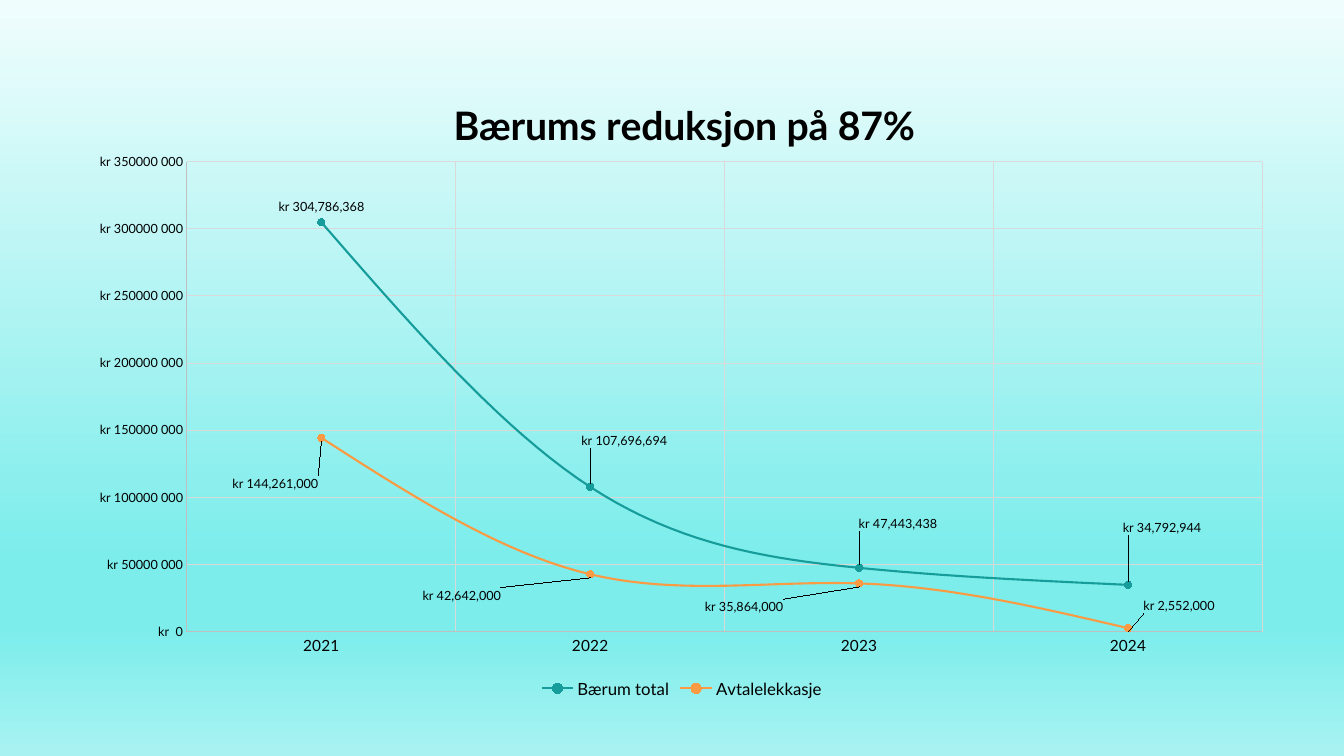
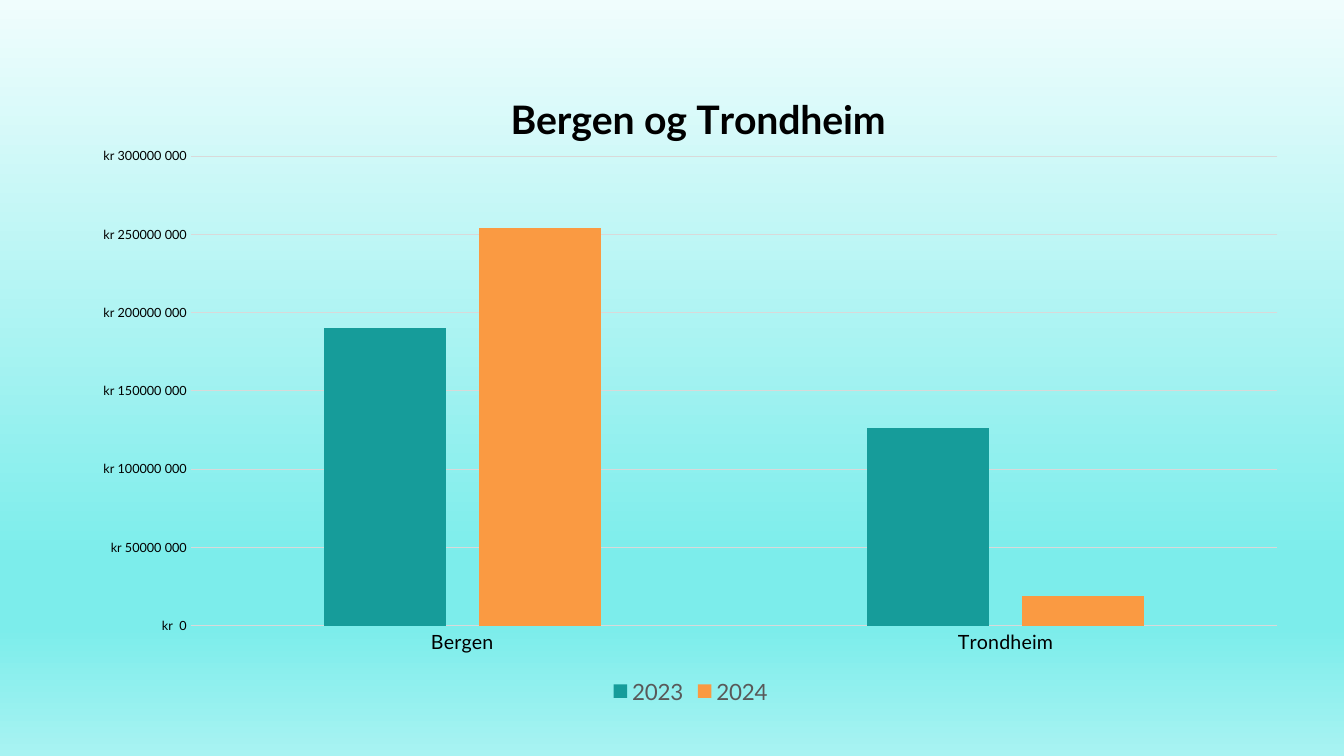
"""Build two chart slides on municipal spending."""
from copy import deepcopy
from dataclasses import dataclass

from pptx import Presentation
from pptx.chart.data import CategoryChartData
from pptx.dml.color import RGBColor
from pptx.enum.chart import (
    XL_CHART_TYPE, XL_LABEL_POSITION, XL_LEGEND_POSITION, XL_MARKER_STYLE, XL_TICK_MARK)
from pptx.oxml import parse_xml
from pptx.oxml.ns import nsdecls
from pptx.util import Cm, Pt

LINE, COLUMN = XL_CHART_TYPE.LINE_MARKERS, XL_CHART_TYPE.COLUMN_CLUSTERED
ABOVE, BELOW = XL_LABEL_POSITION.ABOVE, XL_LABEL_POSITION.BELOW
LEGEND_BOTTOM = XL_LEGEND_POSITION.BOTTOM
CIRCLE = XL_MARKER_STYLE.CIRCLE
NO_TICK = XL_TICK_MARK.NONE


@dataclass(frozen=True)
class Theme:
    """Hold the shared colours, type sizes and number formats."""
    font: str = "Lato"
    text: str = "000000"
    muted: str = "595959"
    axis: str = "BFBFBF"
    grid: str = "D9D9D9"
    series: tuple = ("169C9A", "FA9A42")
    background: tuple = ((0, "F0FDFD"), (0.74, "7CEDEB"), (0.83, "7CEDEB"), (1, "A8F3F2"))
    title_size: int = 28
    base_size: int = 10
    small_size: int = 9
    axis_format: str = '"kr"\\ #\\ ##0;[Red]\\-"kr"\\ #\\ ##0'
    label_format: str = '"kr"\\ #,##0'


THEME = Theme()


def set_values(target, values):
    """Set each attribute named in a dict of format values."""
    for name, value in values.items():
        setattr(target, name, value)


def style_font(font, size, color=THEME.text, bold=False):
    """Apply the theme typeface with a size and colour."""
    set_values(font, {"name": THEME.font, "size": Pt(size), "bold": bold})
    font.color.rgb = RGBColor.from_string(color)


def style_line(line, color, width=0.75):
    """Give a line a solid colour and a width."""
    line.color.rgb = RGBColor.from_string(color)
    line.width = Pt(width)


def style_fill(fill, color):
    """Give a fill one solid colour."""
    fill.solid()
    fill.fore_color.rgb = RGBColor.from_string(color)


def place(parent, index, **percents):
    """Insert a manual chart layout given in percent."""
    for old in parent.xpath("c:layout"):
        parent.remove(old)
    inner = '<c:layoutTarget val="inner"/>' if "w" in percents else ""
    modes = "" if percents.pop("offset", False) else (
        '<c:xMode val="edge"/><c:yMode val="edge"/>')
    sizes = "".join(f'<c:{key} val="{value / 100:.3f}"/>' for key, value in percents.items())
    parent.insert(index, parse_xml(
        f'<c:layout {nsdecls("c")}><c:manualLayout>{inner}{modes}{sizes}'
        "</c:manualLayout></c:layout>"))


def clear_fills(chart):
    """Make the chart area and the plot area transparent."""
    no_fill = parse_xml(
        f'<c:spPr {nsdecls("c", "a")}><a:noFill/><a:ln><a:noFill/></a:ln></c:spPr>')
    chart.element.xpath("c:chart")[0].addnext(no_fill)
    chart.element.xpath("c:chart/c:plotArea")[0].append(deepcopy(no_fill))


def add_page(deck):
    """Add a blank page with the gradient background."""
    page = deck.slides.add_slide(deck.slide_layouts[6])
    fill = page.background.fill
    fill.gradient()
    fill.gradient_angle = 270
    stop_list = page.element.xpath(".//a:gsLst")[0]
    while len(stop_list) < len(THEME.background):
        stop_list.append(deepcopy(stop_list[0]))
    for stop, (position, color) in zip(fill.gradient_stops, THEME.background):
        stop.position = position
        stop.color.rgb = RGBColor.from_string(color)
    return page


def style_title(chart, text, x, y):
    """Write the bold chart title at a position in percent."""
    chart.has_title = True
    frame = chart.chart_title.text_frame
    frame.text = text
    style_font(frame.paragraphs[0].runs[0].font, THEME.title_size, bold=True)
    place(chart.element.xpath("c:chart/c:title")[0], 1, x=x, y=y)


def style_axes(chart, category_size, maximum):
    """Format the category axis and the kroner axis."""
    for axis, size in ((chart.category_axis, category_size),
                       (chart.value_axis, THEME.small_size)):
        set_values(axis, {"major_tick_mark": NO_TICK, "minor_tick_mark": NO_TICK})
        style_font(axis.tick_labels.font, size)
    set_values(chart.value_axis, {
        "minimum_scale": 0, "maximum_scale": maximum, "major_unit": 50_000_000,
        "has_major_gridlines": True})
    style_line(chart.value_axis.major_gridlines.format.line, THEME.grid)
    set_values(chart.value_axis.tick_labels, {
        "number_format": THEME.axis_format, "number_format_is_linked": False})


def style_legend(chart, size, color):
    """Put the legend under the plot."""
    chart.has_legend = True
    set_values(chart.legend, {"position": LEGEND_BOTTOM, "include_in_layout": False})
    style_font(chart.legend.font, size, color)


def add_kroner_chart(page, kind, box, categories, rows):
    """Add a chart of kroner amounts with the base font."""
    data = CategoryChartData(number_format=THEME.label_format)
    data.categories = categories
    for name, values in rows:
        data.add_series(name, values)
    chart = page.shapes.add_chart(kind, *map(Cm, box), data).chart
    style_font(chart.font, THEME.base_size)
    chart.plots[0].vary_by_categories = False
    clear_fills(chart)
    return chart


def label_series(chart, index, position, offsets):
    """Show a series' values, moving points by offsets in percent."""
    series = chart.plots[0].series[index]
    labels = series.data_labels
    set_values(labels, {
        "show_value": True, "position": position,
        "number_format": THEME.label_format, "number_format_is_linked": False})
    style_font(labels.font, THEME.small_size)
    number_format = chart.element.xpath(".//c:ser/c:dLbls/c:numFmt")[index]
    for point, (x, y) in offsets.items():
        label = series.points[point].data_label
        label.position = position
        style_font(label.font, THEME.small_size)
        element = chart.element.xpath(
            f".//c:ser[{index + 1}]/c:dLbls/c:dLbl[c:idx/@val={point}]")[0]
        place(element, 1, offset=True, x=x, y=y)
        element.insert(2, deepcopy(number_format))


def build_reduction_page(deck):
    """Build the line chart of the reduction in Bærum."""
    chart = add_kroner_chart(
        add_page(deck), LINE, (1.9, 1.65, 30.56, 16.05), ("2021", "2022", "2023", "2024"),
        (("Bærum total", (304786368, 107696694, 47443438, 34792944)),
         ("Avtalelekkasje", (144261000, 42642000, 35864000, 2552000))))
    style_title(chart, "Bærums reduksjon på 87%", 30.6, 3.8)
    style_axes(chart, 11, 350_000_000)
    style_legend(chart, 12, THEME.text)
    place(chart.element.xpath("c:chart/c:plotArea")[0], 0, x=9.2, y=15.1, w=88.7, h=73.8)
    chart.category_axis.has_major_gridlines = True
    style_line(chart.category_axis.major_gridlines.format.line, THEME.grid)
    for axis in (chart.category_axis, chart.value_axis):
        style_line(axis.format.line, THEME.axis)
    for series, color in zip(chart.plots[0].series, THEME.series):
        series.smooth = True
        style_line(series.format.line, color, 1.5)
        set_values(series.marker, {"style": CIRCLE, "size": 5})
        style_fill(series.marker.format.fill, color)
        style_line(series.marker.format.line, color)
    label_series(chart, 0, ABOVE, {1: (2.8, -4.8), 2: (3.2, -4.5), 3: (2.8, -6.6)})
    label_series(chart, 1, BELOW, {
        0: (-3.8, 4.8), 1: (-10.6, 0.9), 2: (-9.5, 1.3), 3: (4.2, -5.9)})


def build_cities_page(deck):
    """Build the column chart of Bergen and Trondheim."""
    chart = add_kroner_chart(
        add_page(deck), COLUMN, (2, 1.5, 30.81, 16.36), ("Bergen", "Trondheim"),
        (("2023", (190_000_000, 126_000_000)), ("2024", (254_000_000, 19_000_000))))
    style_title(chart, "Bergen og Trondheim", 34.7, 3.8)
    style_axes(chart, 14, 300_000_000)
    style_legend(chart, 16, THEME.muted)
    place(chart.element.xpath("c:chart/c:plotArea")[0], 0, x=9.1, y=14.9, w=88.9, h=72.3)
    style_line(chart.category_axis.format.line, THEME.grid)
    chart.value_axis.format.line.fill.background()
    set_values(chart.plots[0], {"gap_width": 219, "overlap": -27})
    for series, color in zip(chart.plots[0].series, THEME.series):
        style_fill(series.format.fill, color)


def main():
    """Build and save the deck."""
    deck = Presentation()
    set_values(deck, {"slide_width": Cm(33.87), "slide_height": Cm(19.05)})
    build_reduction_page(deck)
    build_cities_page(deck)
    deck.save("out.pptx")


if __name__ == "__main__":
    main()
